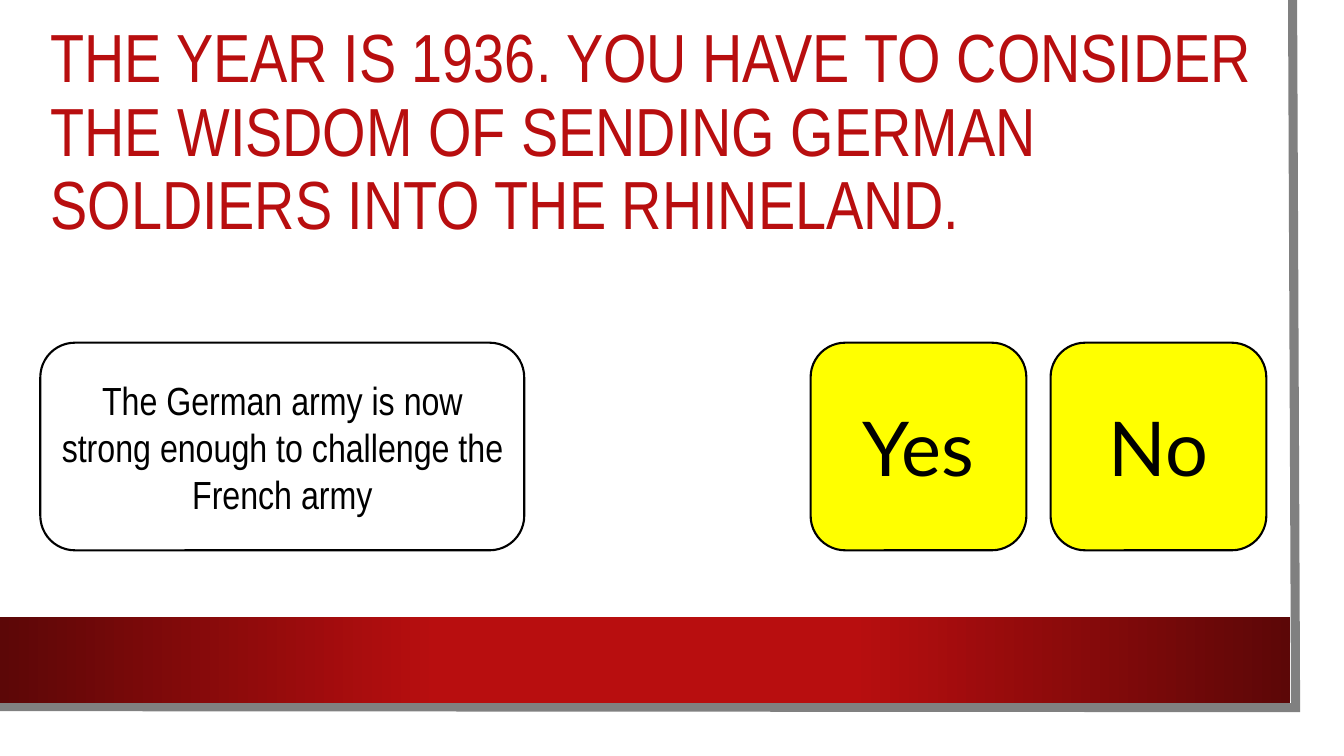
from lxml import etree
from pptx import Presentation
from pptx.dml.color import RGBColor
from pptx.enum.shapes import MSO_SHAPE as SHAPE
from pptx.enum.text import MSO_ANCHOR as ANCHOR, MSO_AUTO_SIZE as FIT, PP_ALIGN as ALIGN
from pptx.oxml import parse_xml
from pptx.oxml.ns import nsdecls, qn
from pptx.util import Pt

PX = 9144
COLORS = {
    "red": "B80E0F",
    "dark": "5C0707",
    "grey": "808080",
    "yellow": "FFFF00",
    "white": "FFFFFF",
    "black": "000000",
}
NARROW = "Arial Narrow"


def rgb(name):
    return RGBColor.from_string(COLORS[name])


def write(tf, text, size, font=NARROW, color="black", align=ALIGN.CENTER, spacing=None):
    tf.word_wrap = True
    tf.auto_size = FIT.NONE
    tf.vertical_anchor = ANCHOR.MIDDLE
    p = tf.paragraphs[0]
    p.alignment = align
    p.line_spacing = spacing
    r = p.add_run()
    r.text = text
    r.font.size = Pt(size)
    r.font.name = font
    r.font.bold = False
    r.font.color.rgb = rgb(color)


class Deck:
    def __init__(self, width, height):
        self.prs = Presentation()
        self.prs.slide_width = width * PX
        self.prs.slide_height = height * PX
        self.s = self.prs.slides.add_slide(self.prs.slide_layouts[5])

    def title(self, text, x, y, w, h):
        sp = self.s.shapes.title
        sp.left, sp.top, sp.width, sp.height = (v * PX for v in (x, y, w, h))
        write(sp.text_frame, text, 48.6, color="red", align=ALIGN.LEFT, spacing=0.9)

    def edge(self, points, color, width):
        builder = self.s.shapes.build_freeform(*points[0], scale=PX)
        builder.add_line_segments(points[1:], close=False)
        sp = builder.convert_to_shape()
        sp.shadow.inherit = False
        sp.fill.background()
        sp.line.color.rgb = rgb(color)
        sp.line.width = Pt(width)
        etree.SubElement(sp.line._get_or_add_ln(), qn("a:miter"), lim="800000")

    def band(self, x, y, w, h, stops):
        sp = self.s.shapes.add_shape(SHAPE.RECTANGLE, x * PX, y * PX, w * PX, h * PX)
        sp.shadow.inherit = False
        sp.line.fill.background()
        sp.fill.gradient()
        sp.fill.gradient_angle = 0
        gs_list = sp._element.spPr.find(qn("a:gradFill")).find(qn("a:gsLst"))
        gs_list.clear()
        for pos, color in stops:
            gs_list.append(parse_xml(
                f'<a:gs {nsdecls("a")} pos="{pos * 1000}">'
                f'<a:srgbClr val="{COLORS[color]}"/></a:gs>'))

    def card(self, text, x, y, w, h, fill, **style):
        sp = self.s.shapes.add_shape(SHAPE.ROUNDED_RECTANGLE, x * PX, y * PX, w * PX, h * PX)
        sp.shadow.inherit = False
        sp.fill.solid()
        sp.fill.fore_color.rgb = rgb(fill)
        sp.line.color.rgb = rgb("black")
        sp.line.width = Pt(1.5)
        write(sp.text_frame, text, **style)


def main():
    deck = Deck(1333, 750)
    deck.edge([(1282, 0), (1285, 702), (0, 701)], "grey", 6.5)
    deck.band(0, 612, 1280, 85, [(0, "dark"), (34, "red"), (66, "red"), (100, "dark")])
    deck.title("THE YEAR IS 1936. YOU HAVE TO CONSIDER THE WISDOM OF SENDING "
               "GERMAN SOLDIERS INTO THE RHINELAND.", 40, 70, 1228, 126)
    top, height = 340, 206
    deck.card("The German army is now strong enough to challenge the French army",
              40, top, 480, height, "white", size=28)
    for i, answer in enumerate(("Yes", "No")):
        deck.card(answer, 804 + i * 238, top, 214, height, "yellow", size=54, font="Lato")
    deck.prs.save("out.pptx")


if __name__ == "__main__":
    main()
